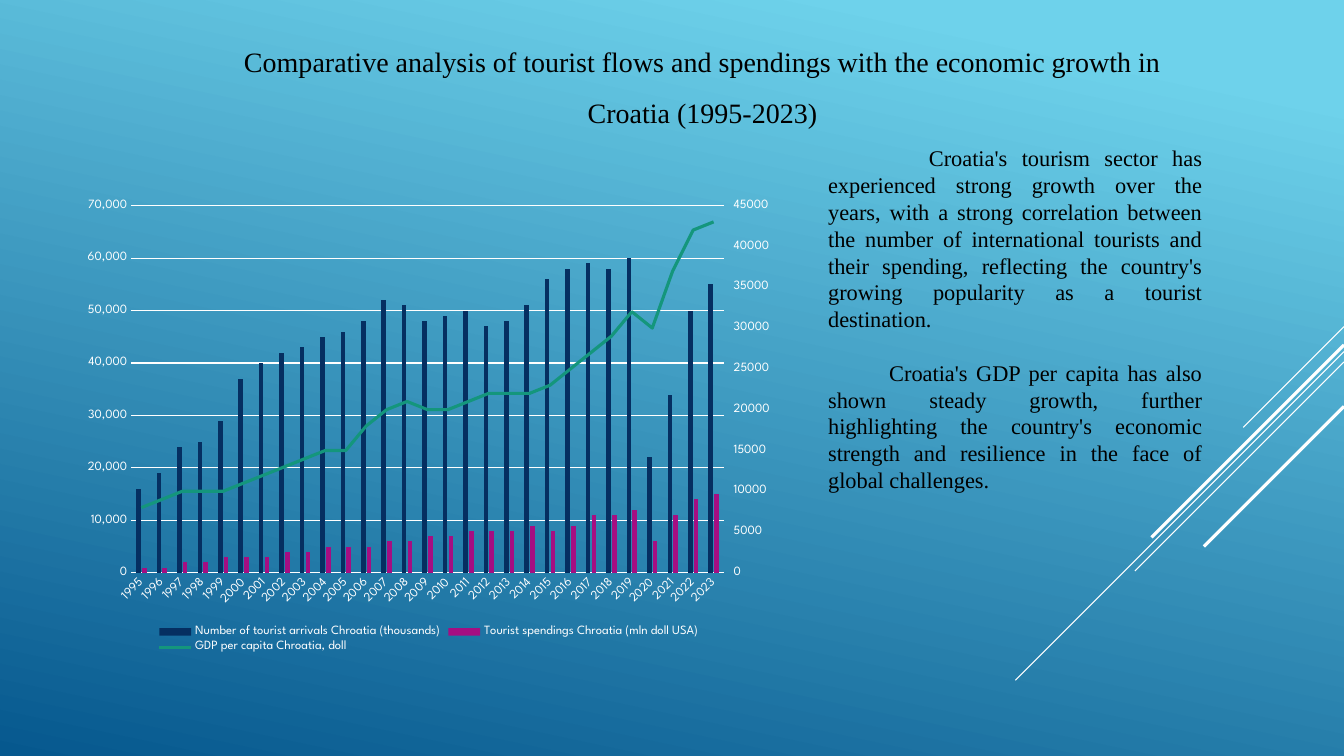
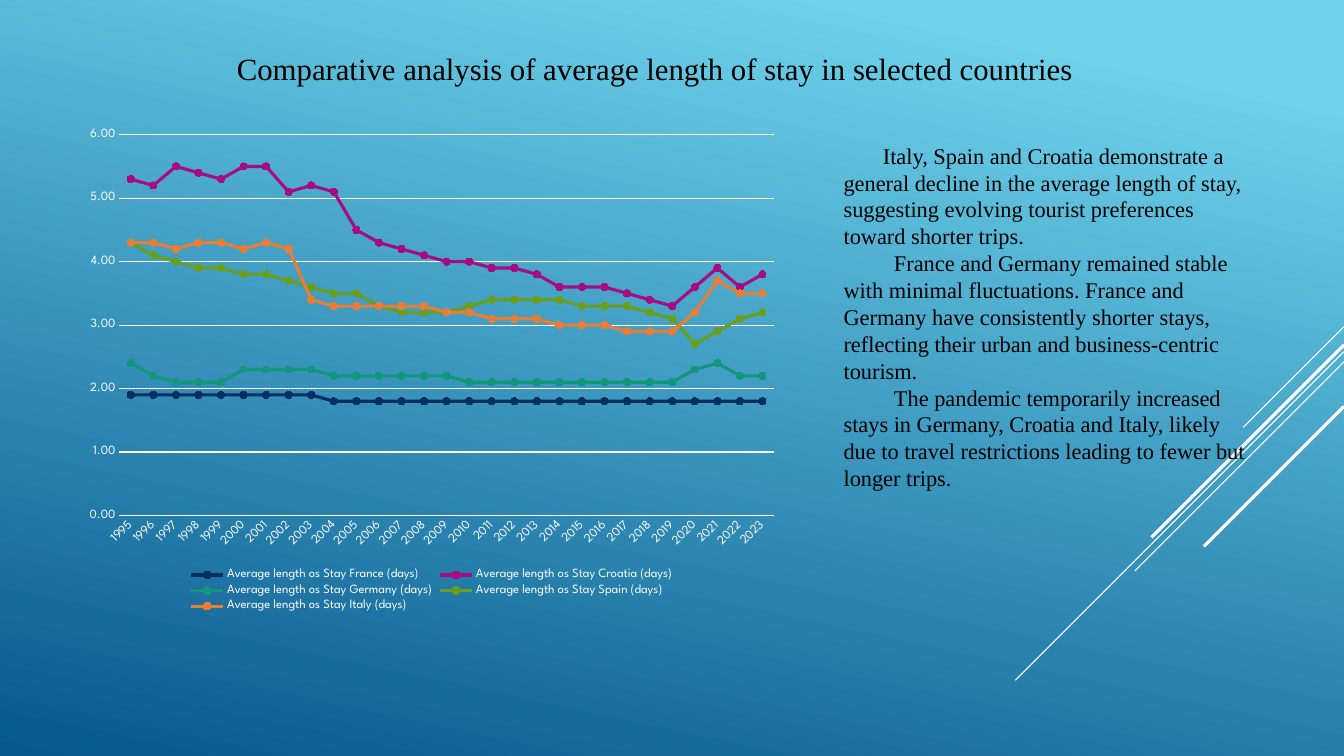
from lxml import etree
from pptx import Presentation
from pptx import util as u
from pptx.chart.data import CategoryChartData
from pptx.dml.color import RGBColor
from pptx.enum import chart as ch
from pptx.enum import shapes, text
from pptx.oxml import ns, parse_xml

WHITE = RGBColor(0xFF, 0xFF, 0xFF)
BLACK = RGBColor(0, 0, 0)
SKY = RGBColor(0x6E, 0xD2, 0xEB)
DEEP = RGBColor(0x06, 0x58, 0x8E)
NAVY = RGBColor(0x05, 0x2F, 0x61)
PLUM = RGBColor(0xA5, 0x0E, 0x82)
TEAL = RGBColor(0x14, 0x96, 0x7C)
OLIVE = RGBColor(0x6A, 0x9E, 0x1F)
AMBER = RGBColor(0xE8, 0x7D, 0x37)
HUES = [NAVY, PLUM, TEAL, OLIVE, AMBER]

WIDE, HIGH = 33.87, 19.05
RAYS = [(8.23, 2.54, 0.75), (8.86, 8.28, 0.75), (9.12, 5.27, 0.75),
        (8.69, 4.85, 2.25), (10.24, 3.53, 2.25)]
YEARS = [str(year) for year in range(1995, 2024)]

FLOWS = {
    "Number of tourist arrivals Chroatia (thousands)": [
        16, 19, 24, 25, 29, 37, 40, 42, 43, 45, 46, 48, 52, 51, 48,
        49, 50, 47, 48, 51, 56, 58, 59, 58, 60, 22, 34, 50, 55],
    "Tourist spendings Chroatia (mln doll USA)": [
        1, 1, 2, 2, 3, 3, 3, 4, 4, 5, 5, 5, 6, 6, 7,
        7, 8, 8, 8, 9, 8, 9, 11, 11, 12, 6, 11, 14, 15],
    "GDP per capita Chroatia, doll": [
        8, 9, 10, 10, 10, 11, 12, 13, 14, 15, 15, 18, 20, 21, 20,
        20, 21, 22, 22, 22, 23, 25, 27, 29, 32, 30, 37, 42, 43],
}
STAYS = {
    "France": [1.9] * 9 + [1.8] * 20,
    "Croatia": [
        5.3, 5.2, 5.5, 5.4, 5.3, 5.5, 5.5, 5.1, 5.2, 5.1, 4.5, 4.3, 4.2, 4.1, 4,
        4, 3.9, 3.9, 3.8, 3.6, 3.6, 3.6, 3.5, 3.4, 3.3, 3.6, 3.9, 3.6, 3.8],
    "Germany": [
        2.4, 2.2, 2.1, 2.1, 2.1, 2.3, 2.3, 2.3, 2.3, 2.2, 2.2, 2.2, 2.2, 2.2, 2.2,
        2.1, 2.1, 2.1, 2.1, 2.1, 2.1, 2.1, 2.1, 2.1, 2.1, 2.3, 2.4, 2.2, 2.2],
    "Spain": [
        4.3, 4.1, 4, 3.9, 3.9, 3.8, 3.8, 3.7, 3.6, 3.5, 3.5, 3.3, 3.2, 3.2, 3.2,
        3.3, 3.4, 3.4, 3.4, 3.4, 3.3, 3.3, 3.3, 3.2, 3.1, 2.7, 2.9, 3.1, 3.2],
    "Italy": [
        4.3, 4.3, 4.2, 4.3, 4.3, 4.2, 4.3, 4.2, 3.4, 3.3, 3.3, 3.3, 3.3, 3.3, 3.2,
        3.2, 3.1, 3.1, 3.1, 3, 3, 3, 2.9, 2.9, 2.9, 3.2, 3.7, 3.5, 3.5],
}

PLOT = """<c:lineChart %s><c:grouping val="standard"/><c:varyColors val="0"/>
<c:marker val="1"/><c:axId val="5001"/><c:axId val="5002"/></c:lineChart>"""
BASE = """<c:catAx %s><c:axId val="5001"/>
<c:scaling><c:orientation val="minMax"/></c:scaling><c:delete val="1"/>
<c:axPos val="b"/><c:crossAx val="5002"/><c:crosses val="autoZero"/></c:catAx>"""
SIDE = """<c:valAx %s><c:axId val="5002"/>
<c:scaling><c:orientation val="minMax"/><c:max val="45000"/><c:min val="0"/></c:scaling>
<c:delete val="0"/><c:axPos val="r"/><c:numFmt formatCode="General" sourceLinked="0"/>
<c:majorTickMark val="out"/><c:minorTickMark val="none"/><c:tickLblPos val="nextTo"/>
<c:spPr><a:ln><a:noFill/></a:ln></c:spPr><c:crossAx val="5001"/><c:crosses val="max"/>
<c:majorUnit val="5000"/></c:valAx>"""


class Deck:
    """Holds the shared style and the current slide."""

    serif = "Times New Roman"
    sans = "League Spartan"

    def __init__(self):
        self.prs = Presentation()
        self.prs.slide_width = u.Cm(WIDE)
        self.prs.slide_height = u.Cm(HIGH)

    def page(self):
        self.slide = self.prs.slides.add_slide(self.prs.slide_layouts[6])
        fill = self.slide.background.fill
        fill.gradient()
        fill.gradient_angle = 258
        for stop, hue, place in zip(fill.gradient_stops, (SKY, DEEP), (0.1, 1)):
            stop.color.rgb = hue
            stop.position = place
        for top, span, width in RAYS:
            self.ray(top, span, width)

    def ray(self, top, span, width):
        line = self.slide.shapes.add_connector(
            shapes.MSO_CONNECTOR.STRAIGHT, u.Cm(WIDE), u.Cm(top),
            u.Cm(WIDE - span), u.Cm(top + span))
        line.line.color.rgb = WHITE
        line.line.width = u.Pt(width)
        etree.SubElement(line._element.spPr, ns.qn("a:effectLst"))

    def words(self, box, paras, size, align=text.PP_ALIGN.LEFT, gap=0):
        frame = self.slide.shapes.add_textbox(*map(u.Cm, box)).text_frame
        frame.word_wrap = True
        frame.auto_size = text.MSO_AUTO_SIZE.SHAPE_TO_FIT_TEXT
        for i, (indent, words) in enumerate(paras):
            para = frame.add_paragraph() if i else frame.paragraphs[0]
            para.alignment = align
            para.space_before = u.Pt(gap if i else 0)
            para._p.get_or_add_pPr().set("indent", str(u.Cm(indent)))
            run = para.add_run()
            run.text = words
            self.font(run.font, size, self.serif, BLACK)
        return frame

    def font(self, font, size, face, hue):
        font.size = u.Pt(size)
        font.name = face
        font.color.rgb = hue

    def label(self, font):
        self.font(font, 9, self.sans, WHITE)

    def chart(self, kind, box, rows, form, top, step):
        data = CategoryChartData()
        data.categories = YEARS
        for name, vals in rows.items():
            data.add_series(name, vals)
        chart = self.slide.shapes.add_chart(kind, *map(u.Cm, box), data).chart
        chart.has_title = False
        self.label(chart.font)
        chart.has_legend = True
        chart.legend.position = ch.XL_LEGEND_POSITION.BOTTOM
        chart.legend.include_in_layout = False
        self.label(chart.legend.font)
        chart.plots[0].vary_by_categories = False
        cat, val = chart.category_axis, chart.value_axis
        for axis in (cat, val):
            axis.major_tick_mark = ch.XL_TICK_MARK.NONE
            self.label(axis.tick_labels.font)
        self.thin(cat.format.line)
        turn = cat._element.find(".//" + ns.qn("a:bodyPr"))
        turn.set("rot", "-2700000")
        turn.set("vert", "horz")
        val.format.line.fill.background()
        val.has_major_gridlines = True
        self.thin(val.major_gridlines.format.line)
        val.minimum_scale, val.maximum_scale, val.major_unit = 0, top, step
        val.tick_labels.number_format = form
        val.tick_labels.number_format_is_linked = False
        return chart

    def thin(self, line):
        line.color.rgb = WHITE
        line.width = u.Pt(0.75)

    def trace(self, row, hue, dots):
        row.smooth = False
        row.format.line.color.rgb = hue
        row.format.line.width = u.Pt(2.25)
        row.marker.style = ch.XL_MARKER_STYLE.CIRCLE if dots else ch.XL_MARKER_STYLE.NONE
        if dots:
            row.marker.size = 5
            row.marker.format.fill.solid()
            row.marker.format.fill.fore_color.rgb = hue
            row.marker.format.line.color.rgb = hue

    def lines(self, box, rows):
        chart = self.chart(ch.XL_CHART_TYPE.LINE_MARKERS, box, rows, "0.00", 6, 1)
        for row, hue in zip(chart.plots[0].series, HUES):
            self.trace(row, hue, True)

    def combo(self, box, rows):
        chart = self.chart(ch.XL_CHART_TYPE.COLUMN_CLUSTERED, box, rows,
                           "#,##0", 70000, 10000)
        bars = chart.plots[0]
        bars.gap_width, bars.overlap = 219, -27
        last = bars._element.findall(ns.qn("c:ser"))[2]
        for flag in last.findall(ns.qn("c:invertIfNegative")):
            last.remove(flag)
        plot, base, side = [parse_xml(part % ns.nsdecls("c", "a"))
                            for part in (PLOT, BASE, SIDE)]
        plot.insert(2, last)
        bars._element.addnext(plot)
        chart.value_axis._element.addnext(side)
        side.addnext(base)
        for row, hue in zip(bars.series, HUES):
            row.format.fill.solid()
            row.format.fill.fore_color.rgb = hue
        self.trace(chart.plots[1].series[0], TEAL, False)


def main():
    deck = Deck()

    deck.page()
    deck.combo((1.85, 4.8, 17.91, 11.76),
               {name: [v * 1000 for v in vals] for name, vals in FLOWS.items()})
    title = deck.words((5.41, 0.58, 24.59, 2.67), [
        (0, "Comparative analysis of tourist flows and spendings with the "
            "economic growth in Croatia (1995-2023)")], 20, text.PP_ALIGN.CENTER)
    title.paragraphs[0].line_spacing = 1.5
    title.paragraphs[0].space_after = u.Pt(8)
    deck.words((20.62, 3.51, 9.93, 9.14), [
        (2.54, "Croatia's tourism sector has experienced strong growth over the "
               "years, with a strong correlation between the number of "
               "international tourists and their spending, reflecting the "
               "country's growing popularity as a tourist destination."),
        (1.54, "Croatia's GDP per capita has also shown steady growth, further "
               "highlighting the country's economic strength and resilience in "
               "the face of global challenges.")],
        16, text.PP_ALIGN.JUSTIFY, 19)

    deck.page()
    deck.words((5.72, 1.12, 22.45, 1.19), [
        (0, "Comparative analysis of average length of stay in selected countries")], 22)
    deck.lines((1.9, 3, 17.96, 12.52),
               {f"Average length os Stay {land} (days)": vals
                for land, vals in STAYS.items()})
    deck.words((21.01, 3.45, 10.64, 9.83), [
        (0.99, "Italy, Spain and Croatia demonstrate a general decline in the "
               "average length of stay, suggesting evolving tourist preferences "
               "toward shorter trips."),
        (1.27, "France and Germany remained stable with minimal fluctuations. "
               "France and Germany have consistently shorter stays, reflecting "
               "their urban and business-centric tourism."),
        (1.27, "The pandemic temporarily increased stays in Germany, Croatia and "
               "Italy, likely due to travel restrictions leading to fewer but "
               "longer trips.")], 16)

    deck.prs.save("out.pptx")


if __name__ == "__main__":
    main()
